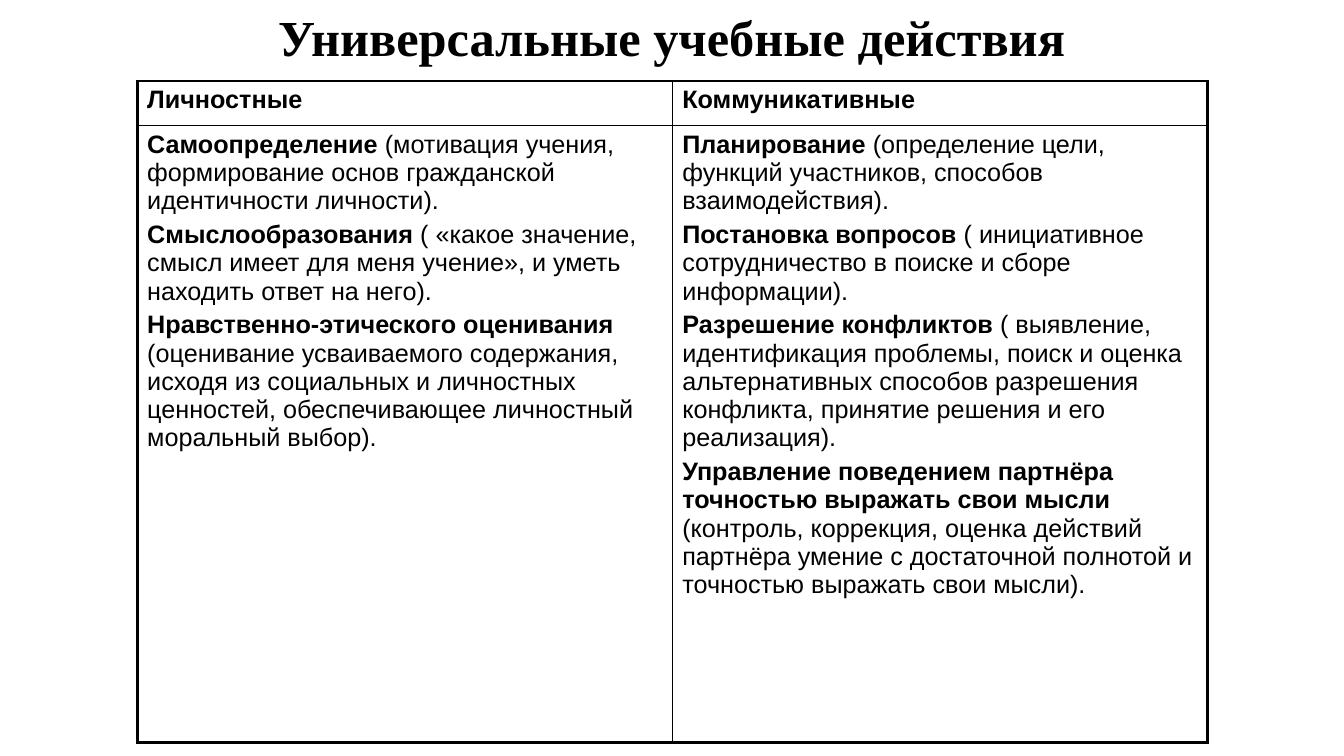
import pptx
import pptx.util
import pptx.dml.color
import pptx.enum.text
import pptx.oxml
import pptx.oxml.ns
from pptx.util import Cm

COLORS = {"text": "000000", "line": "000000", "back": "FFFFFF"}
TITLE = {"size": pptx.util.Pt(36), "name": "Times New Roman", "bold": True}
TERM = {"size": pptx.util.Pt(18), "name": "Arial", "bold": True}
NOTE = {**TERM, "bold": False}
MARGINS = {"margin_left": Cm(0.25), "margin_right": Cm(0.25),
           "margin_top": Cm(0.13), "margin_bottom": Cm(0.13)}
THICK, THIN = 2.25, 1

# Each column: heading, then pairs of term and explanation
ACTIONS = [
    ("Личностные", [
        ("Самоопределение",
         " (мотивация учения, формирование основ гражданской идентичности личности)."),
        ("Смыслообразования ",
         "( «какое значение, смысл имеет для меня учение», и уметь находить ответ на него)."),
        ("Нравственно-этического оценивания ",
         "(оценивание усваиваемого содержания, исходя из социальных и личностных "
         "ценностей, обеспечивающее личностный моральный выбор)."),
    ]),
    ("Коммуникативные", [
        ("Планирование ",
         "(определение цели, функций участников, способов взаимодействия)."),
        ("Постановка вопросов ",
         "( инициативное сотрудничество в поиске и сборе информации)."),
        ("Разрешение конфликтов",
         " ( выявление, идентификация проблемы, поиск и оценка альтернативных способов "
         "разрешения конфликта, принятие решения и его реализация)."),
        ("Управление поведением партнёра точностью выражать свои мысли ",
         "(контроль, коррекция, оценка действий партнёра умение с достаточной полнотой "
         "и точностью выражать свои мысли)."),
    ]),
]


def color(name):
    return pptx.dml.color.RGBColor.from_string(COLORS[name])


def set_attrs(obj, values):
    for name, value in values.items():
        setattr(obj, name, value)


def add_run(p, text, font):
    r = p.add_run()
    r.text = text
    set_attrs(r.font, font)
    r.font.color.rgb = color("text")


def add_title(s, left, top, width, height):
    tf = s.shapes.add_textbox(left, top, width, height).text_frame
    set_attrs(tf, {**MARGINS, "word_wrap": True,
                   "vertical_anchor": pptx.enum.text.MSO_ANCHOR.MIDDLE})
    p = tf.paragraphs[0]
    set_attrs(p, {"alignment": pptx.enum.text.PP_ALIGN.CENTER, "line_spacing": 0.9})
    add_run(p, "Универсальные учебные действия", TITLE)


def set_borders(cell, widths):
    # Borders precede the fill in the cell properties
    tc_pr = cell._tc.get_or_add_tcPr()
    for i, (side, width) in enumerate(widths.items()):
        tc_pr.insert(i, pptx.oxml.parse_xml(
            f'<a:{side} {pptx.oxml.ns.nsdecls("a")} w="{pptx.util.Pt(width)}">'
            f'<a:solidFill><a:srgbClr val="{COLORS["line"]}"/></a:solidFill></a:{side}>'))


def fill_cell(cell, paragraphs):
    set_attrs(cell, MARGINS)
    cell.fill.background()
    tf = cell.text_frame
    for i, runs in enumerate(paragraphs):
        p = tf.add_paragraph() if i else tf.paragraphs[0]
        if i:
            p.space_before = pptx.util.Pt(4)
        for text, font in zip(runs, (TERM, NOTE)):
            add_run(p, text, font)


def add_actions_table(s, left, top, width, height):
    head = Cm(1.12)
    table = s.shapes.add_table(2, len(ACTIONS), left, top, width, height).table
    set_attrs(table, {"first_row": False, "horz_banding": False})
    table.rows[0].height, table.rows[1].height = head, height - head
    last = len(ACTIONS) - 1
    for c, (heading, items) in enumerate(ACTIONS):
        table.columns[c].width = width // len(ACTIONS)
        for row, paragraphs in enumerate(([(heading,)], items)):
            cell = table.cell(row, c)
            fill_cell(cell, paragraphs)
            # Thick outer frame, thin inner lines
            set_borders(cell, {"lnL": THIN if c else THICK,
                               "lnR": THICK if c == last else THIN,
                               "lnT": THIN if row else THICK,
                               "lnB": THICK if row else THIN})


def main():
    prs = pptx.Presentation()
    set_attrs(prs, {"slide_width": Cm(33.87), "slide_height": Cm(19.05)})
    s = prs.slides.add_slide(prs.slide_layouts[6])
    s.background.fill.solid()
    s.background.fill.fore_color.rgb = color("back")
    add_title(s, Cm(2.33), Cm(0), Cm(29.21), Cm(2.03))
    add_actions_table(s, Cm(3.46), Cm(2.04), Cm(26.97), Cm(16.67))
    prs.save("out.pptx")


if __name__ == "__main__":
    main()
